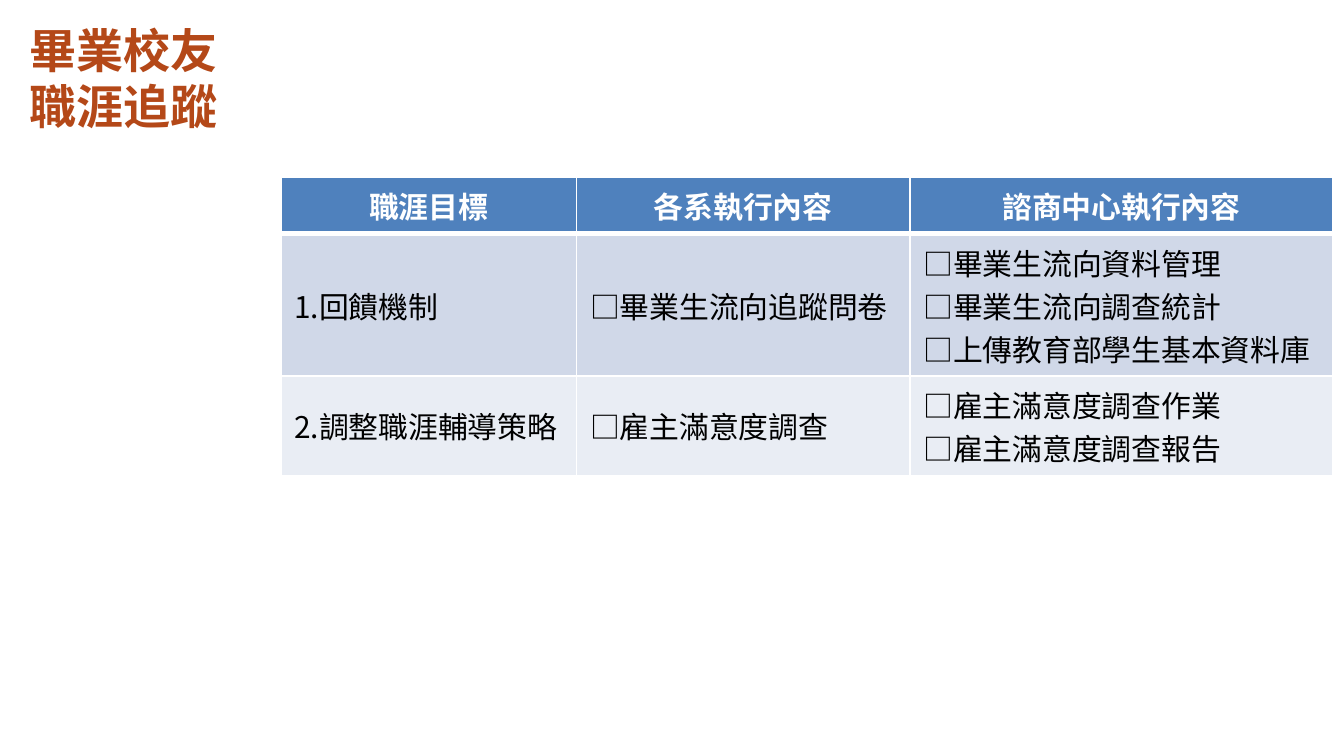
from typing import NamedTuple

from lxml import etree
from pptx import Presentation
from pptx import util as u
from pptx.dml.color import RGBColor
from pptx.enum import text
from pptx.oxml.ns import qn

WIDTH = 10
HEIGHT = WIDTH * 9 / 16
FONT = "Noto Sans CJK SC"


class Style(NamedTuple):
    size: float
    color: str
    bold: bool
    align: text.PP_ALIGN


class Row(NamedTuple):
    height: float
    fill: str
    bottom_line: float
    style: Style
    cells: tuple[str, ...]


TITLE = Style(25.2, "B44818", True, text.PP_ALIGN.LEFT)
HEADER = Style(16, "FFFFFF", True, text.PP_ALIGN.CENTER)
BODY = Style(16, "000000", False, text.PP_ALIGN.JUSTIFY)

COLUMNS = (2.2, 2.48, 3.15)
ROWS = (
    Row(0.42, "4F81BD", 3, HEADER, ("職涯目標", "各系執行內容", "諮商中心執行內容")),
    Row(1.06, "D0D8E8", 1, BODY, (
        "1.回饋機制",
        "□畢業生流向追蹤問卷",
        "□畢業生流向資料管理\n□畢業生流向調查統計\n□上傳教育部學生基本資料庫",
    )),
    Row(0.74, "E9EDF4", 1, BODY, (
        "2.調整職涯輔導策略",
        "□雇主滿意度調查",
        "□雇主滿意度調查作業\n□雇主滿意度調查報告",
    )),
)


def rgb(color: str) -> RGBColor:
    return RGBColor.from_string(color)


def write(tf, content: str, style: Style) -> None:
    """Fill a text frame, one paragraph per line of content."""
    tf.text = content
    for p in tf.paragraphs:
        p.alignment = style.align
        font = p.font
        font.size, font.bold, font.name = u.Pt(style.size), style.bold, FONT
        font.color.rgb = rgb(style.color)
        properties = p._p.pPr.find(qn("a:defRPr"))
        etree.SubElement(properties, qn("a:ea")).set("typeface", FONT)


def add_borders(cell, top: float, bottom: float) -> None:
    """Draw white cell borders; widths are in points."""
    properties = cell._tc.get_or_add_tcPr()
    for i, (side, width) in enumerate(
        (("lnL", 1), ("lnR", 1), ("lnT", top), ("lnB", bottom))
    ):
        line = etree.Element(qn(f"a:{side}"), w=str(u.Pt(width)))
        fill = etree.SubElement(line, qn("a:solidFill"))
        etree.SubElement(fill, qn("a:srgbClr"), val="FFFFFF")
        properties.insert(i, line)


def add_title(s) -> None:
    box = s.shapes.add_textbox(
        u.Inches(0.12), u.Inches(0.11), u.Inches(0.22 * WIDTH), u.Inches(0.94)
    )
    tf = box.text_frame
    tf.word_wrap = True
    tf.vertical_anchor = text.MSO_ANCHOR.MIDDLE
    write(tf, "畢業校友\v職涯追蹤", TITLE)


def add_plan_table(s) -> None:
    table = s.shapes.add_table(
        len(ROWS), len(COLUMNS), u.Inches(2.09), u.Inches(1.32),
        u.Inches(sum(COLUMNS)), u.Inches(sum(row.height for row in ROWS)),
    ).table
    for column, width in zip(table.columns, COLUMNS):
        column.width = u.Inches(width)
    top_line = 1
    for r, row in enumerate(ROWS):
        table.rows[r].height = u.Inches(row.height)
        for c, content in enumerate(row.cells):
            cell = table.cell(r, c)
            cell.fill.solid()
            cell.fill.fore_color.rgb = rgb(row.fill)
            cell.vertical_anchor = text.MSO_ANCHOR.MIDDLE
            add_borders(cell, top_line, row.bottom_line)
            write(cell.text_frame, content, row.style)
        top_line = row.bottom_line


def main() -> None:
    prs = Presentation()
    prs.slide_width, prs.slide_height = u.Inches(WIDTH), u.Inches(HEIGHT)
    s = prs.slides.add_slide(prs.slide_layouts[6])
    add_title(s)
    add_plan_table(s)
    prs.save("out.pptx")


if __name__ == "__main__":
    main()
